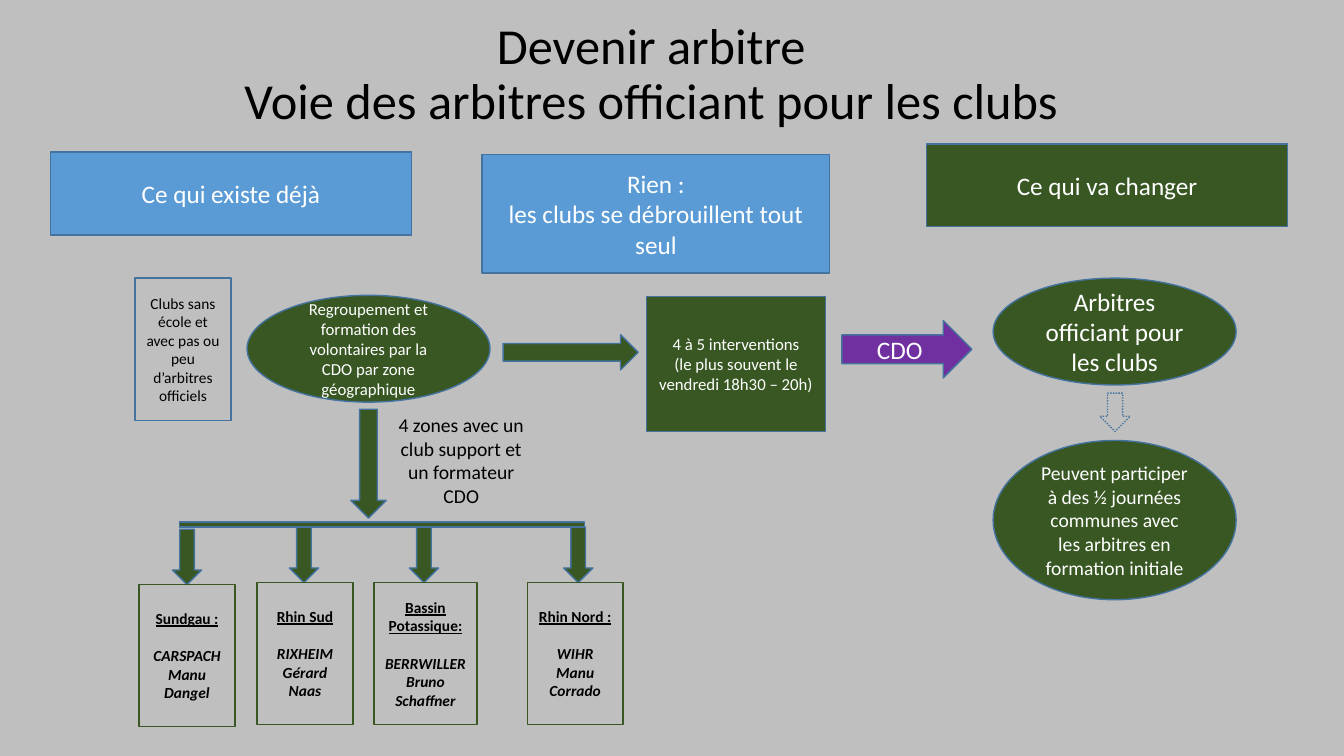
from dataclasses import dataclass

from pptx import Presentation
from pptx.dml.color import RGBColor
from pptx.enum.dml import MSO_LINE
from pptx.enum.shapes import MSO_SHAPE as Shape
from pptx.enum.text import MSO_ANCHOR as Anchor, PP_ALIGN as Align
from pptx.util import Inches, Pt


@dataclass(frozen=True)
class Theme:
    font: str = "Calibri"
    background: str = "BFBFBF"
    green: str = "385723"
    blue: str = "5B9BD5"
    purple: str = "7030A0"
    outline: str = "43739E"
    dark: str = "000000"
    light: str = "FFFFFF"
    title: int = 36
    heading: int = 18
    body: int = 14
    detail: int = 12
    small: int = 11


@dataclass(frozen=True)
class Box:
    left: float
    top: float
    width: float
    height: float

    def inner(self, dx, dy, width, height):
        """Box whose corner is offset from this one's corner."""
        return Box(self.left + dx, self.top + dy, width, height)

    def lengths(self):
        return [Inches(n) for n in (self.left, self.top, self.width, self.height)]


THEME = Theme()


def rgb(value):
    return RGBColor.from_string(value)


def write(shape, text, size, color, anchor=Anchor.MIDDLE):
    """Put centred text in a shape, one paragraph per line."""
    frame = shape.text_frame
    frame.text = text
    frame.word_wrap = True
    frame.vertical_anchor = anchor
    for para in frame.paragraphs:
        para.alignment = Align.CENTER
        for span in para.runs:
            span.font.name = THEME.font
            span.font.size = Pt(size)
            span.font.color.rgb = rgb(color)
    return frame


def add_block(slide, kind, box, fill=None, line=THEME.outline, text="",
              size=THEME.heading, color=THEME.light):
    block = slide.shapes.add_shape(kind, *box.lengths())
    block.shadow.inherit = False
    if fill:
        block.fill.solid()
        block.fill.fore_color.rgb = rgb(fill)
    else:
        block.fill.background()
    block.line.color.rgb = rgb(line)
    block.line.width = Pt(1)
    if text:
        write(block, text, size, color)
    return block


def add_title(slide, box):
    title = slide.shapes.title
    title.left, title.top, title.width, title.height = box.lengths()
    frame = write(title, "Devenir arbitre\nVoie des arbitres officiant pour les clubs",
                  THEME.title, THEME.dark)
    for para in frame.paragraphs:
        para.line_spacing = 0.9
        para.space_before = Pt(0)


def add_headings(slide, box):
    headings = [
        (0, 0.08, 3.58, 0.82, THEME.blue, "Ce qui existe déjà"),
        (4.28, 0.1, 3.45, 1.18, THEME.blue,
         "Rien :\nles clubs se débrouillent tout seul"),
        (8.69, 0, 3.58, 0.82, THEME.green, "Ce qui va changer"),
    ]
    for dx, dy, width, height, fill, text in headings:
        add_block(slide, Shape.RECTANGLE, box.inner(dx, dy, width, height), fill, text=text)


def add_training(slide, box):
    """Clubs, their regrouping and the sessions that follow."""
    add_block(slide, Shape.RECTANGLE, box.inner(0, 0, 0.95, 1.41),
              text="Clubs sans école et avec pas ou peu d’arbitres officiels",
              size=THEME.small, color=THEME.dark)
    add_block(slide, Shape.OVAL, box.inner(1.11, 0.17, 2.41, 1.06), THEME.green,
              text="Regroupement et formation des volontaires par la CDO "
                   "par zone géographique", size=THEME.detail)
    add_block(slide, Shape.RIGHT_ARROW, box.inner(3.65, 0.56, 1.34, 0.35), THEME.green)
    add_block(slide, Shape.RECTANGLE, box.inner(5.07, 0.18, 1.78, 1.34), THEME.green,
              text="4 à 5 interventions\n(le plus souvent le vendredi 18h30 – 20h)",
              size=THEME.detail)
    add_block(slide, Shape.RIGHT_ARROW, box.inner(7.01, 0.42, 1.29, 0.57),
              THEME.purple, text="CDO")


def add_outcome(slide, box):
    add_block(slide, Shape.OVAL, box.inner(0, 0, box.width, 1.06), THEME.green,
              text="Arbitres officiant pour les clubs")
    arrow = add_block(slide, Shape.DOWN_ARROW, box.inner(1.06, 1.14, 0.3, 0.38))
    arrow.line.dash_style = MSO_LINE.ROUND_DOT
    add_block(slide, Shape.OVAL, box.inner(0, 1.61, box.width, 1.58), THEME.green,
              text="Peuvent participer à des ½ journées communes avec "
                   "les arbitres en formation initiale", size=THEME.body)


def add_zone(slide, box, arrow_left, heading, club, trainer):
    """Arrow down to a framed zone; box spans both."""
    add_block(slide, Shape.DOWN_ARROW, box.inner(arrow_left, 0, 0.29, 0.55), THEME.green)
    card = add_block(slide, Shape.RECTANGLE, box.inner(0, 0.55, box.width, 1.41),
                     line=THEME.green, text=f"{heading}\n{club}\n{trainer}",
                     size=THEME.small, color=THEME.dark)
    first, *others = card.text_frame.paragraphs
    first.space_after = Pt(13.4)
    first.runs[0].font.underline = True
    for para in (first, *others):
        para.runs[0].font.bold = True
        para.runs[0].font.italic = para is not first


def add_zones(slide, box):
    add_block(slide, Shape.DOWN_ARROW, box.inner(2.1, 0, 0.35, 1.08), THEME.green)
    note = slide.shapes.add_textbox(*box.inner(2.41, -0.01, 1.57, 1.04).lengths())
    write(note, "4 zones avec un club support et un formateur CDO",
          THEME.body, THEME.dark, Anchor.TOP)
    add_block(slide, Shape.RECTANGLE, box.inner(0.4, 1.12, 4.02, 0.05), THEME.green)
    zones = [
        (0, 1.19, 0.95, 0.33, "Sundgau :", "CARSPACH", "Manu Dangel"),
        (1.17, 1.17, 0.95, 0.32, "Rhin Sud", "RIXHEIM", "Gérard Naas"),
        (2.33, 1.17, 1.02, 0.35, "Bassin Potassique:", "BERRWILLER", "Bruno Schaffner"),
        (3.85, 1.17, 0.95, 0.36, "Rhin Nord :", "WIHR", "Manu Corrado"),
    ]
    for dx, dy, width, arrow_left, *names in zones:
        add_zone(slide, box.inner(dx, dy, width, 1.96), arrow_left, *names)


def main():
    deck = Presentation()
    deck.slide_width, deck.slide_height = Inches(13.33), Inches(7.5)
    slide = deck.slides.add_slide(deck.slide_layouts.get_by_name("Title Only"))
    slide.background.fill.solid()
    slide.background.fill.fore_color.rgb = rgb(THEME.background)
    add_title(slide, Box(2.11, 0.52, 8.7, 0.46))
    add_headings(slide, Box(0.5, 1.43, 12.27, 1.28))
    add_training(slide, Box(1.34, 2.76, 8.3, 1.52))
    add_outcome(slide, Box(9.85, 2.76, 2.41, 3.19))
    add_zones(slide, Box(1.38, 4.06, 4.8, 3.15))
    deck.save("out.pptx")


if __name__ == "__main__":
    main()
